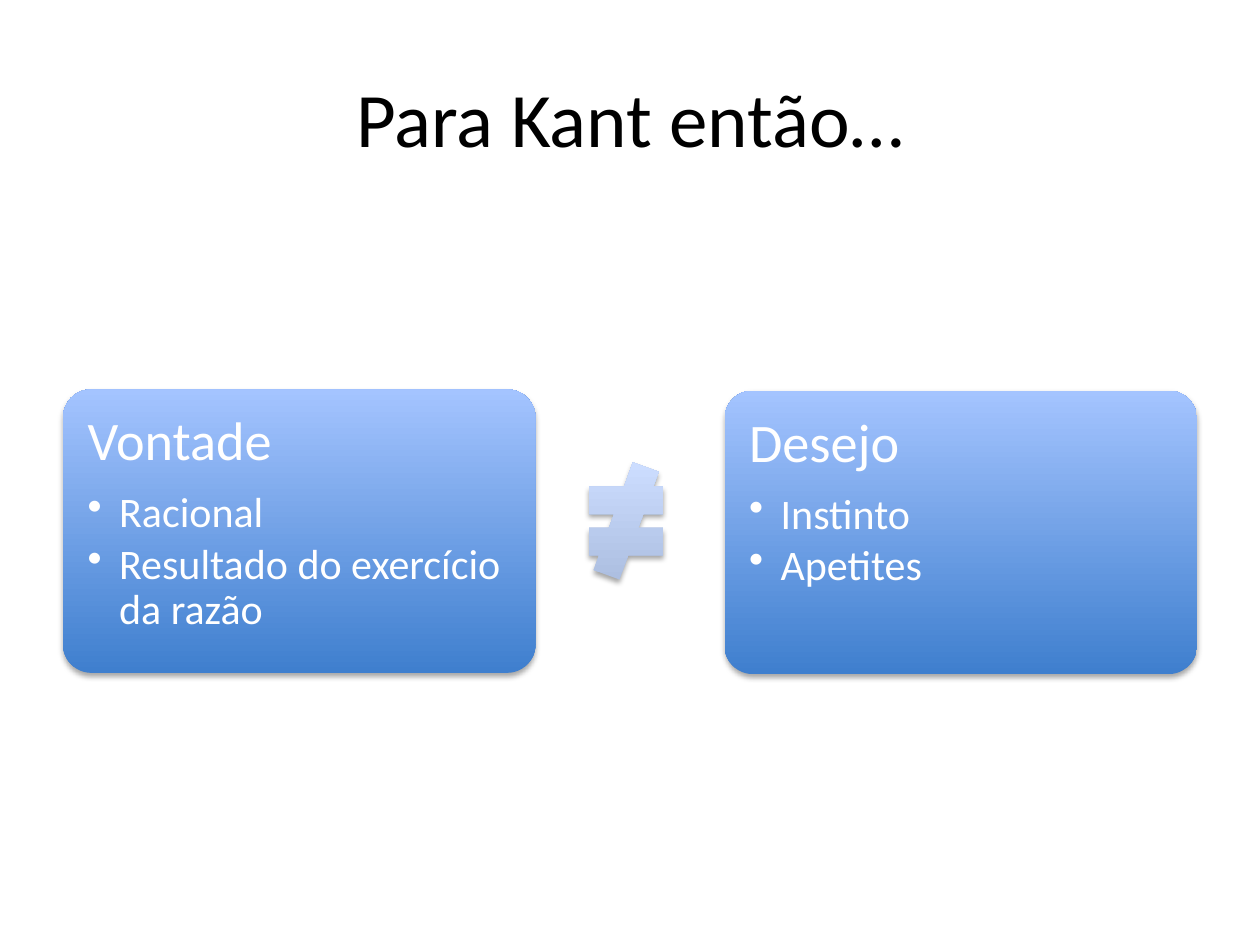
from dataclasses import dataclass

from lxml import etree
from pptx import Presentation
from pptx import util as u
from pptx.dml import color
from pptx.enum import shapes, text
from pptx.oxml import ns
from pptx.slide import Slide

COLUMNS, ROWS = 40, 30


def rgb(value):
    """Turn a hex string into a colour."""
    return color.RGBColor.from_string(value)


def add_child(parent, tag, **attributes):
    """Append a DrawingML element to its parent."""
    return etree.SubElement(parent, ns.qn(tag), attributes)


def write(paragraph, words, size, ink, font, align=text.PP_ALIGN.LEFT,
          line=None, after=0, bullet=False):
    """Fill a paragraph and format it; after is a share of the text size."""
    run = paragraph.add_run()
    run.text = words
    run.font.size, run.font.name = u.Pt(size), font
    run.font.color.rgb = rgb(ink)
    paragraph.alignment = align
    paragraph.line_spacing = line
    paragraph.space_before, paragraph.space_after = u.Pt(0), u.Pt(size * after)
    if bullet:
        paragraph.level = 1
        properties = paragraph._p.get_or_add_pPr()
        properties.set("marL", str(u.Inches(0.25)))
        properties.set("indent", str(u.Inches(-0.25)))
        add_child(properties, "a:buChar", char="•")


@dataclass
class Board:
    """Hold the style and the current slide."""

    presentation: Presentation
    slide: Slide
    font: str = "Calibri"
    title_ink: str = "000000"
    card_ink: str = "FFFFFF"
    card_fill: tuple = ("3F7FCE", "A4C4FF")
    symbol_fill: tuple = ("ADBFE1", "CCDDFF")

    def box(self, column, row, columns, rows):
        """Convert grid units to left, top, width and height."""
        across = self.presentation.slide_width / COLUMNS
        down = self.presentation.slide_height / ROWS
        return [round(length) for length in
                (column * across, row * down, columns * across, rows * down)]

    def title(self, words, *place):
        """Place and format the title."""
        shape = self.slide.shapes.title
        shape.left, shape.top, shape.width, shape.height = self.box(*place)
        shape.text_frame.vertical_anchor = text.MSO_ANCHOR.MIDDLE
        write(shape.text_frame.paragraphs[0], words, 44, self.title_ink,
              self.font, align=text.PP_ALIGN.CENTER)

    def raised(self, kind, stops, *place):
        """Add a shape with a vertical gradient and a soft shadow."""
        shape = self.slide.shapes.add_shape(kind, *self.box(*place))
        shape.line.fill.background()
        shape.fill.gradient()
        shape.fill.gradient_angle = 90
        for stop, value in zip(shape.fill.gradient_stops, stops):
            stop.color.rgb = rgb(value)
        shape.shadow.inherit = False
        effects = shape._element.spPr.find(ns.qn("a:effectLst"))
        shadow = add_child(effects, "a:outerShdw", blurRad=str(u.Pt(3.1)),
                           dist=str(u.Pt(1.8)), dir="5400000", rotWithShape="0")
        add_child(add_child(shadow, "a:srgbClr", val="000000"), "a:alpha", val="35000")
        return shape

    def card(self, heading, points, *place):
        """Add a rounded card with a heading and bullet points."""
        shape = self.raised(shapes.MSO_SHAPE.ROUNDED_RECTANGLE, self.card_fill, *place)
        shape.adjustments[0] = 0.1
        frame = shape.text_frame
        frame.word_wrap = True
        frame.vertical_anchor = text.MSO_ANCHOR.TOP
        frame.margin_left = frame.margin_right = u.Inches(0.13)
        frame.margin_top = frame.margin_bottom = u.Inches(0.13)
        write(frame.paragraphs[0], heading, 31, self.card_ink, self.font,
              line=0.9, after=0.35)
        for point in points:
            write(frame.add_paragraph(), point, 24, self.card_ink, self.font,
                  line=0.9, after=0.15, bullet=True)

    def not_equal(self, *place):
        """Add the inequality sign."""
        self.raised(shapes.MSO_SHAPE.MATH_NOT_EQUAL, self.symbol_fill, *place)


def main():
    """Build and save the slide."""
    presentation = Presentation()
    presentation.slide_width, presentation.slide_height = u.Inches(10), u.Inches(7.5)
    slide = presentation.slides.add_slide(presentation.slide_layouts[5])
    board = Board(presentation, slide)
    board.title("Para Kant então…", 2, 1.2, 36, 5)
    board.card("Vontade", ["Racional", "Resultado do exercício da razão"],
               2, 12.36, 15, 9)
    board.not_equal(18.28, 14.68, 3.2, 3.72)
    board.card("Desejo", ["Instinto", "Apetites"], 23, 12.4, 15, 9)
    presentation.save("out.pptx")


if __name__ == "__main__":
    main()
